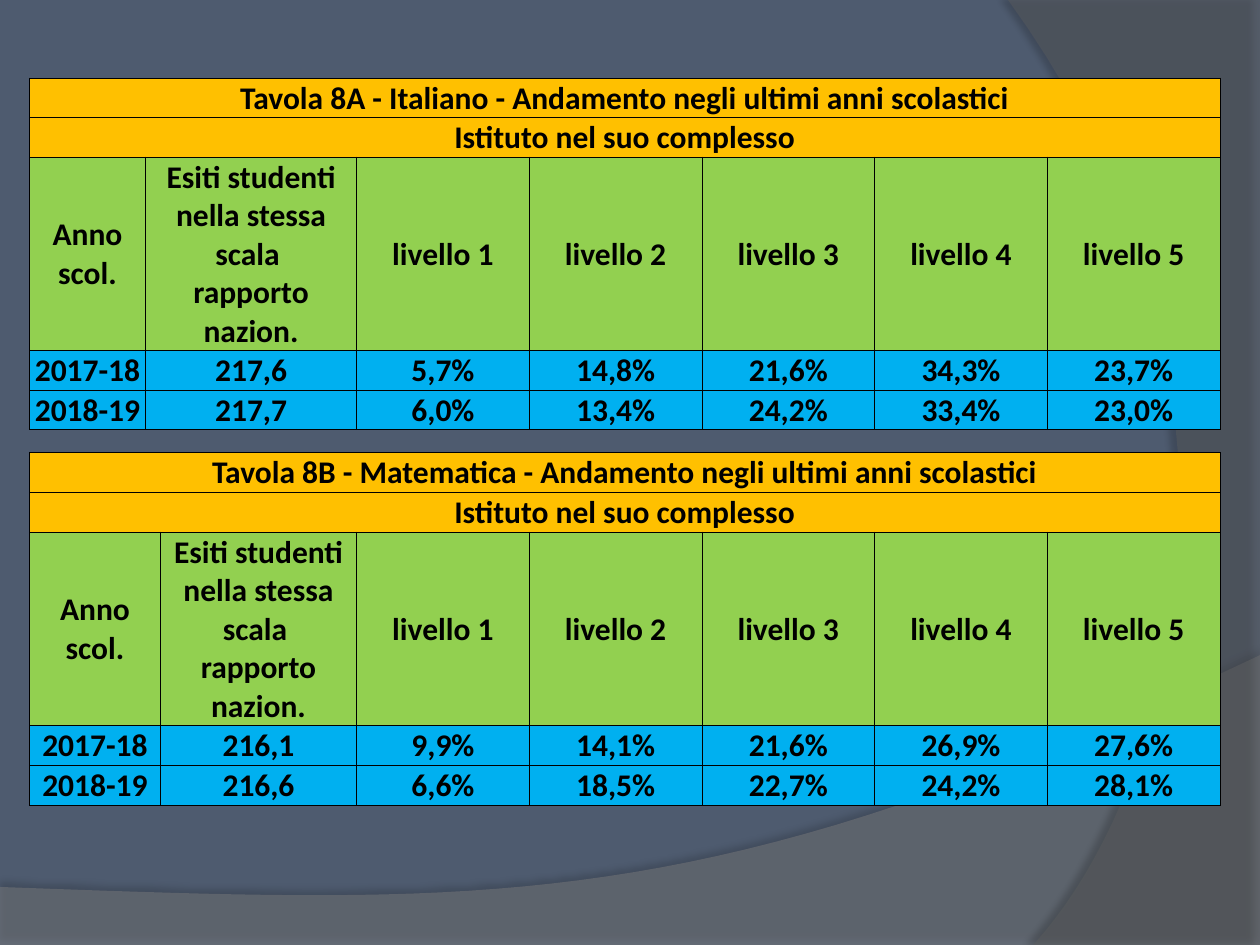
from dataclasses import dataclass

from lxml.etree import SubElement
from pptx import Presentation
from pptx.dml.color import RGBColor as RGB
from pptx.enum.text import MSO_ANCHOR as Anchor, PP_ALIGN as Align
from pptx.oxml import parse_xml
from pptx.oxml.ns import nsdecls, qn
from pptx.util import Pt


@dataclass(frozen=True)
class Theme:
    font: str = "Calibri"
    size: float = 18
    border: float = 0.5
    ink: str = "000000"
    bg: str = "4E5B6F"
    wave: str = "7F7F7F"
    side: str = "5E5E5E"
    title: str = "FFC000"
    head: str = "92D050"
    data: str = "00B0F0"


T = Theme()
LEVELS = [f"livello {n}" for n in range(1, 6)]
HEAD = ["Anno scol.", "Esiti studenti\nnella stessa scala \nrapporto nazion.", *LEVELS]
ITALIAN = [
    ["2017-18", "217,6", "5,7%", "14,8%", "21,6%", "34,3%", "23,7%"],
    ["2018-19", "217,7", "6,0%", "13,4%", "24,2%", "33,4%", "23,0%"],
]
MATHS = [
    ["2017-18", "216,1", "9,9%", "14,1%", "21,6%", "26,9%", "27,6%"],
    ["2018-19", "216,6", "6,6%", "18,5%", "22,7%", "24,2%", "28,1%"],
]


def bezier(p0, p1, p2, p3, steps=40):
    """Points along a cubic curve, after its start."""
    for i in range(1, steps + 1):
        t = i / steps
        u = 1 - t
        yield tuple(u**3 * a + 3 * u * u * t * b + 3 * u * t * t * c + t**3 * d
                    for a, b, c, d in zip(p0, p1, p2, p3))


def add_band(s, box, corners, curve, color, alpha, shadow):
    """Translucent band: straight corners, then a curve from the last one."""
    x, y, w, h = box
    points = [(x + a * w, y + b * h)
              for a, b in [*corners, *bezier(corners[-1], *curve)]]
    points = [(Pt(a), Pt(b)) for a, b in points]
    builder = s.shapes.build_freeform(*points[0])
    builder.add_line_segments(points[1:], close=True)
    sp = builder.convert_to_shape()
    sp.fill.solid()
    sp.fill.fore_color.rgb = RGB.from_string(color)
    sp.line.fill.background()
    clr = sp.fill._xPr.find(qn("a:solidFill"))[0]
    SubElement(clr, qn("a:alpha"), val=str(alpha * 1000))
    opacity, blur, dist, angle = shadow
    sp._element.spPr.append(parse_xml(
        f'<a:effectLst {nsdecls("a")}><a:outerShdw blurRad="{Pt(blur)}" '
        f'dist="{Pt(dist)}" dir="{angle * 60000}" algn="ctr" rotWithShape="0">'
        f'<a:srgbClr val="{T.ink}"><a:alpha val="{opacity * 1000}"/></a:srgbClr>'
        '</a:outerShdw></a:effectLst>'))


def add_background(s, box):
    x, y, w, h = box
    s.background.fill.solid()
    s.background.fill.fore_color.rgb = RGB.from_string(T.bg)
    # Bottom wave
    add_band(s, (x, y + 374.4, w, h - 374.4),
             [(0, 0.8), (0, 1), (1, 1), (1, 0)],
             [(0.56, 0.91), (0.39, 0.86), (0, 0.8)], T.wave, 45, (35, 4, 3.5, 270))
    # Right-hand sweep
    add_band(s, (x + 0.8 * w, y, 0.2 * w, h),
             [(1, 0), (1, 1), (0.1, 1)],
             [(0.68, 0.83), (1.09, 0.4), (0, 0)], T.side, 40, (45, 4, 4, 180))


def style_cell(cell, fill):
    cell.fill.solid()
    cell.fill.fore_color.rgb = RGB.from_string(fill)
    cell.vertical_anchor = Anchor.MIDDLE
    cell.margin_left = cell.margin_right = cell.margin_top = Pt(0.6)
    cell.margin_bottom = 0
    for i, side in enumerate(("lnL", "lnR", "lnT", "lnB")):
        cell._tc.tcPr.insert(i, parse_xml(
            f'<a:{side} {nsdecls("a")} w="{Pt(T.border)}"><a:solidFill>'
            f'<a:srgbClr val="{T.ink}"/></a:solidFill></a:{side}>'))


def write_cell(cell, text):
    p = cell.text_frame.paragraphs[0]
    p.alignment = Align.CENTER
    for i, line in enumerate(text.split("\n")):
        if i:
            p.add_line_break()
        r = p.add_run()
        r.text = line
        r.font.name, r.font.size, r.font.bold = T.font, Pt(T.size), True
        r.font.color.rgb = RGB.from_string(T.ink)


def add_results(s, box, title, data, year_w, score_w, row_h):
    """Two merged title rows, a header row and one row for each year."""
    x, y, w, h = box
    rows = [[title], ["Istituto nel suo complesso"], HEAD, *data]
    fills = [T.title, T.title, T.head] + [T.data] * len(data)
    frame = s.shapes.add_table(len(rows), len(HEAD), Pt(x), Pt(y), Pt(w), Pt(h))
    table = frame.table
    table.first_row = table.horz_banding = False
    level_w = (w - year_w - score_w) / len(LEVELS)
    for col, width in zip(table.columns, [year_w, score_w] + [level_w] * len(LEVELS)):
        col.width = Pt(width)
    for i, (texts, fill) in enumerate(zip(rows, fills)):
        table.rows[i].height = Pt(h - row_h * (len(rows) - 1) if texts is HEAD else row_h)
        for cell in table.rows[i].cells:
            style_cell(cell, fill)
        if len(texts) == 1:
            table.cell(i, 0).merge(table.cell(i, len(HEAD) - 1))
        for j, text in enumerate(texts):
            write_cell(table.cell(i, j), text)


def main():
    prs = Presentation()
    prs.slide_width, prs.slide_height = Pt(720), Pt(540)
    s = prs.slides.add_slide(prs.slide_layouts[6])
    add_background(s, (0, 0, 720, 540))
    add_results(s, (16.8, 44.6, 680.4, 199.8),
                "Tavola 8A - Italiano - Andamento negli ultimi anni scolastici",
                ITALIAN, 66.4, 120.6, 22.3)
    add_results(s, (16.8, 258.5, 680.4, 201.8),
                "Tavola 8B - Matematica - Andamento negli ultimi anni scolastici",
                MATHS, 74.9, 112.1, 22.8)
    prs.save("out.pptx")


if __name__ == "__main__":
    main()
